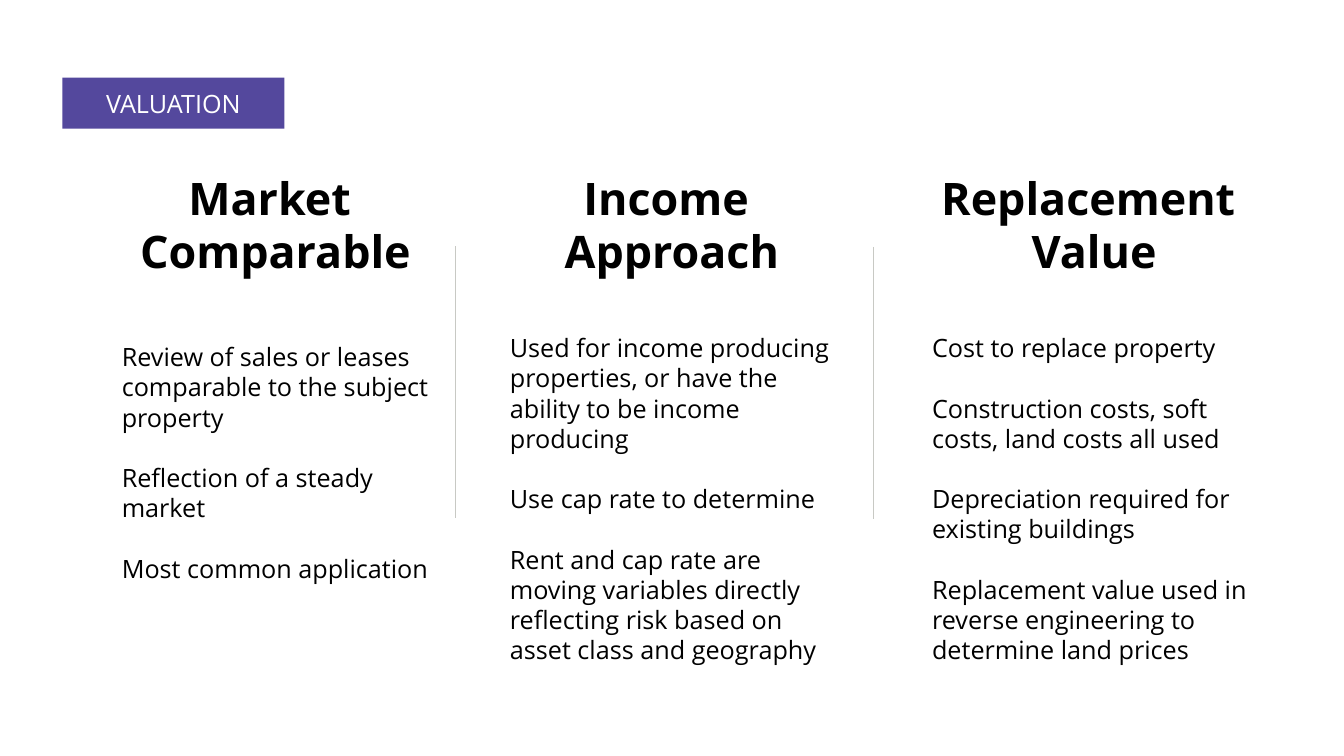
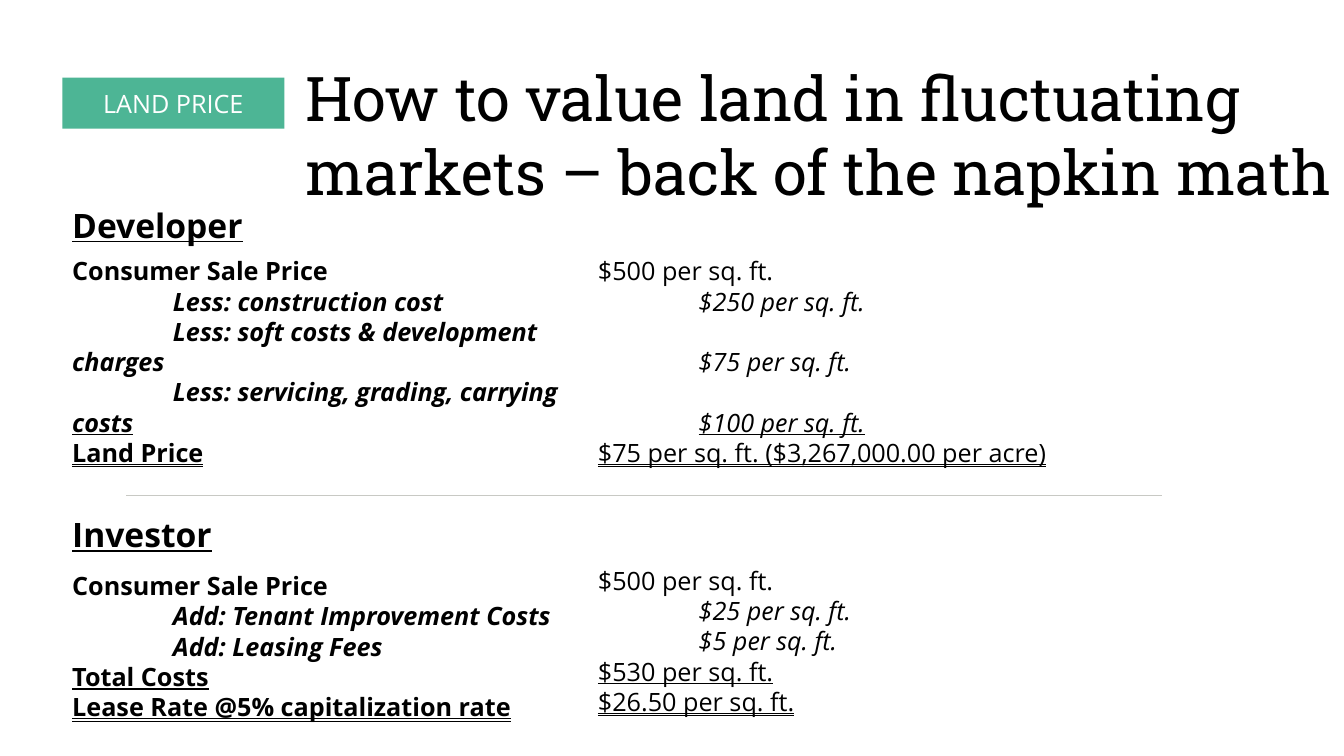
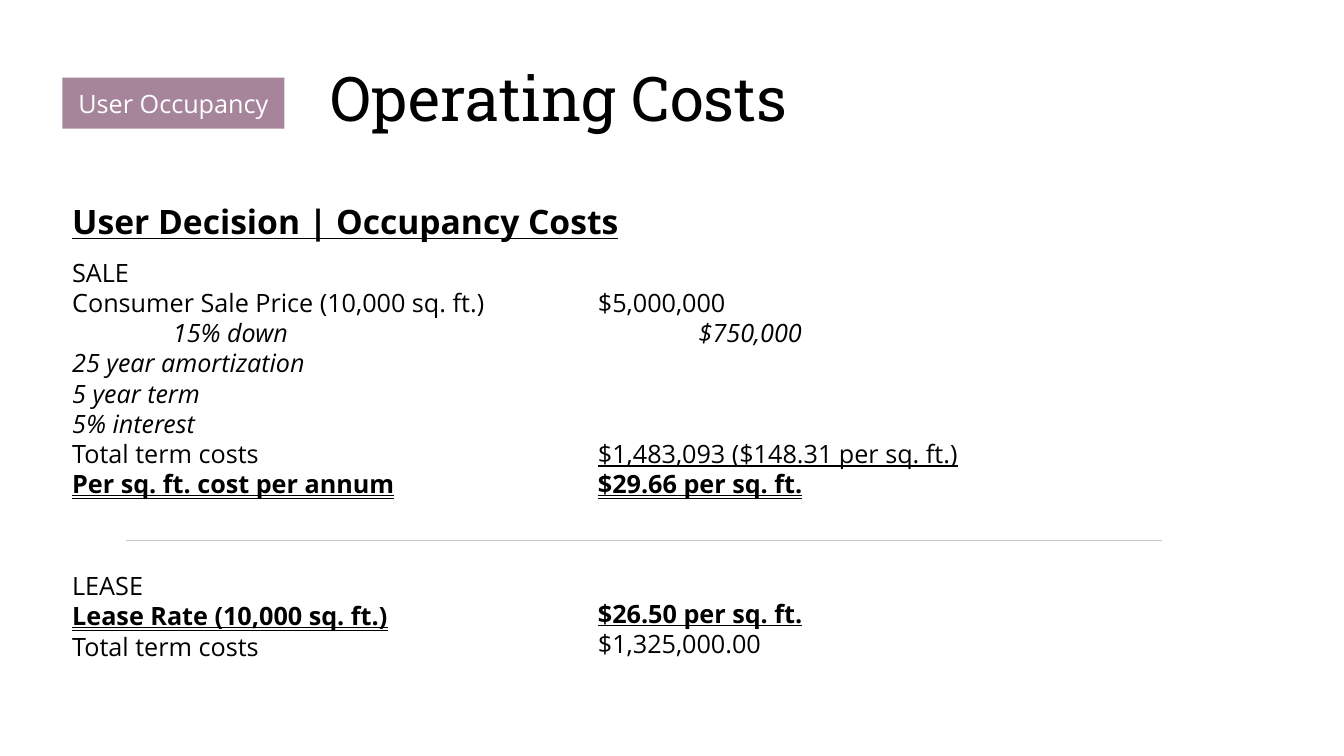
import pptx
import pptx.util
import pptx.dml.color
import pptx.enum.text
import pptx.enum.shapes
import pptx.oxml
from pptx.enum.text import MSO_ANCHOR, MSO_UNDERLINE, PP_ALIGN

Cm = pptx.util.Cm
Pt = pptx.util.Pt

BLACK, WHITE, GREY = "000000", "FFFFFF", "C8C9C4"
PURPLE, GREEN, MAUVE = "54489D", "4DB595", "A6849A"
SANS, SLAB = "Open Sans", "Roboto Slab"
LINE = 21.6
TAB = 2.54
EDGE = 1.57
MARKS = {
    "b": ("bold", True),
    "i": ("italic", True),
    "u": ("underline", True),
    "d": ("underline", MSO_UNDERLINE.DOUBLE_LINE),
}


def paint(target, tone):
    target.rgb = pptx.dml.color.RGBColor.from_string(tone)


def style(item, values):
    for name, value in values.items():
        setattr(item, name, value)


def add_run(para, text, marks, size, face, tone):
    run = para.add_run()
    run.text = text
    look = {"size": Pt(size), "name": face}
    look.update(MARKS[mark] for mark in marks if mark in MARKS)
    style(run.font, look)
    paint(run.font.color, tone)


def write(frame, rows, size=18, face=SANS, tone=BLACK, align=PP_ALIGN.LEFT,
          anchor=MSO_ANCHOR.TOP):
    style(frame, {"word_wrap": True, "vertical_anchor": anchor})
    for index, (marks, text, gap, *tail) in enumerate(rows):
        para = frame.paragraphs[0] if index == 0 else frame.add_paragraph()
        style(para, {"alignment": align, "space_before": Pt(gap * LINE)})
        if "t" in marks:
            para._p.get_or_add_pPr().set("indent", str(Cm(TAB)))
        add_run(para, text, marks, size, face, tone)
        for more in tail:
            add_run(para, more, marks + "u", size, face, tone)


def add_text(slide, box, rows, **look):
    shape = slide.shapes.add_textbox(*map(Cm, box))
    write(shape.text_frame, rows, **look)


def add_rule(slide, *ends):
    rule = slide.shapes.add_connector(
        pptx.enum.shapes.MSO_CONNECTOR.STRAIGHT, *map(Cm, ends))
    rule.line.width = Pt(0.5)
    rule.line.fill.solid()
    paint(rule.line.fill.fore_color, GREY)
    rule._element.spPr.append(pptx.oxml.parse_xml(
        '<a:effectLst xmlns:a="http://schemas.openxmlformats.org/drawingml/2006/main"/>'))


def add_tag(slide, text, tone):
    tag = slide.shapes.add_shape(
        pptx.enum.shapes.MSO_SHAPE.RECTANGLE, *map(Cm, (EDGE, 1.96, 5.6, 1.28)))
    tag.shadow.inherit = False
    tag.fill.solid()
    paint(tag.fill.fore_color, tone)
    tag.line.fill.background()
    write(tag.text_frame, [("", text, 0)], tone=WHITE,
          align=PP_ALIGN.CENTER, anchor=MSO_ANCHOR.MIDDLE)


def add_title(slide, box, text):
    add_text(slide, box, [("", text, 0)], size=44, face=SLAB,
             anchor=MSO_ANCHOR.MIDDLE)


def add_column(slide, left, top, inset, drop, head, points):
    add_text(slide, (left, top, 12.17, 2.51),
             [("b", word, 0) for word in head], size=32,
             align=PP_ALIGN.CENTER, anchor=MSO_ANCHOR.MIDDLE)
    add_text(slide, (left + inset, top + drop, 8.66, 8.7),
             [("", text, min(index, 1)) for index, text in enumerate(points)])


def add_head(slide, top, text):
    add_text(slide, (EDGE, top, 16, 1.27), [("bu", text, 0)], size=24)


def add_ledger(slide, top, shift, names, costs):
    add_text(slide, (EDGE, top, 12.98, 5.64), names)
    add_text(slide, (14.82, top + shift, 12.98, 5.64), costs)


def add_split(slide, top):
    add_rule(slide, 3.18, top, 29.29, top)


def build_value(slide):
    add_tag(slide, "VALUATION", PURPLE)
    columns = [
        (0.86, 1.96, 4.09, ("Market ", "Comparable"), (
            "Review of sales or leases comparable to the subject property",
            "Reflection of a steady market",
            "Most common application")),
        (10.85, 1.75, 3.86, ("Income ", "Approach"), (
            "Used for income producing properties, or have the ability to be "
            "income producing",
            "Use cap rate to determine",
            "Rent and cap rate are moving variables directly reflecting risk "
            "based on asset class and geography")),
        (21.49, 1.75, 3.86, ("Replacement ", "Value"), (
            "Cost to replace property",
            "Construction costs, soft costs, land costs all used",
            "Depreciation required for existing buildings",
            "Replacement value used in reverse engineering to determine land "
            "prices")),
    ]
    for left, inset, drop, head, points in columns:
        add_column(slide, left, 4.39, inset, drop, head, points)
    for left, top in ((11.48, 6.2), (22.02, 6.22)):
        add_rule(slide, left, top, left, top + 6.86)


def build_land(slide):
    add_tag(slide, "LAND PRICE", GREEN)
    add_title(slide, (7.44, 2.59, 27.03, 1.57),
              "How to value land in fluctuating markets – back of the napkin math")
    add_head(slide, 5.03, "Developer")
    add_ledger(slide, 6.32, 0, [
        ("b", "Consumer Sale Price", 0),
        ("bit", "Less: construction cost", 0),
        ("bit", "Less: soft costs & development charges", 0),
        ("bit", "Less: servicing, grading, carrying ", 0, "costs"),
        ("bd", "Land Price", 0),
    ], [
        ("", "$500 per sq. ft.", 0),
        ("it", "$250 per sq. ft.", 0),
        ("it", "$75 per sq. ft.", 1),
        ("itu", "$100 per sq. ft.", 1),
        ("d", "$75 per sq. ft. ($3,267,000.00 per acre)", 0),
    ])
    add_split(slide, 12.47)
    add_head(slide, 12.83, "Investor")
    add_ledger(slide, 14.25, -0.13, [
        ("b", "Consumer Sale Price", 0),
        ("bit", "Add: Tenant Improvement Costs", 0),
        ("bit", "Add: Leasing Fees", 0),
        ("bu", "Total Costs", 0),
        ("bd", "Lease Rate @5% capitalization rate", 0),
    ], [
        ("", "$500 per sq. ft.", 0),
        ("it", "$25 per sq. ft.", 0),
        ("it", "$5 per sq. ft.", 0),
        ("u", "$530 per sq. ft.", 0),
        ("d", "$26.50 per sq. ft.", 0),
    ])


def build_use(slide):
    add_tag(slide, "User Occupancy", MAUVE)
    add_title(slide, (8.08, 1.65, 16.56, 1.57), "Operating Costs")
    add_head(slide, 4.95, "User Decision | Occupancy Costs")
    add_ledger(slide, 6.35, 0.76, [
        ("", "SALE", 0),
        ("", "Consumer Sale Price (10,000 sq. ft.)", 0),
        ("it", "15% down", 0),
        ("i", "25 year amortization", 0),
        ("i", "5 year term", 0),
        ("i", "5% interest", 0),
        ("", "Total term costs", 0),
        ("bd", "Per sq. ft. cost per annum", 0),
    ], [
        ("", "$5,000,000", 0),
        ("it", "$750,000", 0),
        ("u", "$1,483,093 ($148.31 per sq. ft.)", 3),
        ("bd", "$29.66 per sq. ft.", 0),
    ])
    add_split(slide, 13.61)
    add_ledger(slide, 14.25, 0.69, [
        ("", "LEASE", 0),
        ("bd", "Lease Rate (10,000 sq. ft.)", 0),
        ("", "Total term costs", 0),
    ], [
        ("bu", "$26.50 per sq. ft.", 0),
        ("", "$1,325,000.00", 0),
    ])


def main():
    deck = pptx.Presentation()
    style(deck, {"slide_width": Cm(33.87), "slide_height": Cm(19.05)})
    for build in (build_value, build_land, build_use):
        build(deck.slides.add_slide(deck.slide_layouts[6]))
    deck.save("out.pptx")


if __name__ == "__main__":
    main()
